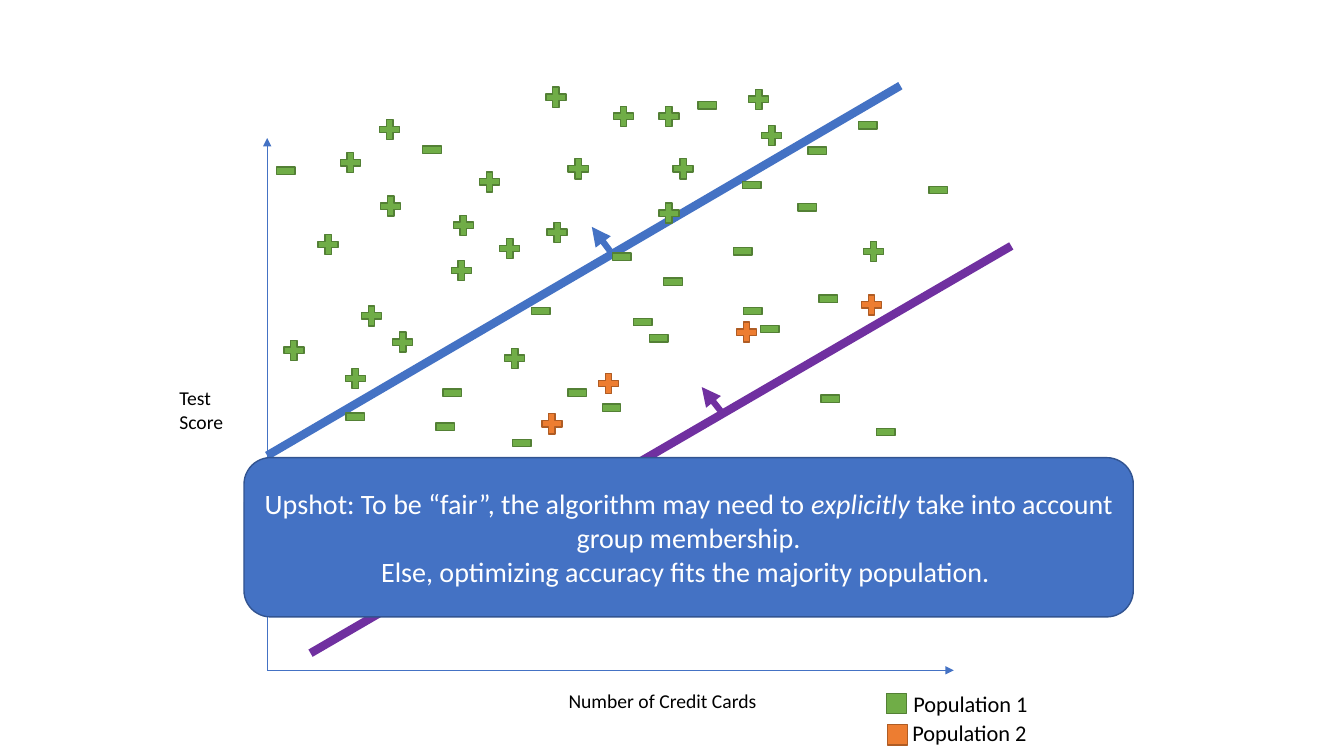
from dataclasses import dataclass

from pptx import Presentation
from pptx import util as u
from pptx.dml.color import RGBColor
from pptx.enum import shapes, text
from pptx.oxml.ns import qn
from lxml import etree


@dataclass(frozen=True)
class Theme:
    font: str = "Calibri"
    blue: str = "4472C4"
    blue_edge: str = "325491"
    purple: str = "7030A0"
    green: tuple = ("70AD47", "538035")
    orange: tuple = ("ED7D31", "AF5C24")
    black: str = "000000"
    white: str = "FFFFFF"
    axis_size: int = 14
    legend_size: int = 16
    callout_size: int = 20


SHAPE = shapes.MSO_SHAPE
PLUS_SIZE = (0.27, 0.27)
MINUS_SIZE = (0.25, 0.31)
SWATCH_SIZE = (0.2, 0.2)

GREEN_PLUSES = [
    (3.55, 3), (4.72, 1.67), (4.97, 3.42), (6.64, 1.54), (7.39, 0.85),
    (3.39, 3.62), (5.38, 0.83), (6.5, 1.98), (3.34, 1.48), (5.6, 1.54),
    (4.44, 2.55), (3.12, 2.29), (6.5, 1.02), (4.92, 2.33), (3.86, 3.26),
    (7.52, 1.21), (3.73, 1.15), (8.53, 2.36), (3.74, 1.91), (6.05, 1.02),
    (5.39, 2.17), (2.78, 3.34), (4.46, 2.1),
]
GREEN_MINUSES = [
    (3.4, 3.98), (7.88, 1.9), (7.33, 1.68), (4.16, 1.33), (6.89, 0.89),
    (2.71, 1.54), (5.6, 3.74), (6.25, 3.04), (7.24, 2.34), (5.24, 2.93),
    (7.98, 1.34), (7.34, 2.93), (7.51, 3.11), (8.66, 4.13), (6.04, 2.39),
    (5.05, 4.24), (6.55, 2.64), (4.29, 4.08), (8.48, 1.09), (8.11, 3.8),
    (5.94, 3.89), (6.41, 3.2), (8.09, 2.81), (9.18, 1.73), (4.36, 3.74),
]
ORANGE_PLUSES = [(5.34, 4.07), (7.27, 3.16), (8.51, 2.89), (5.9, 3.67)]


class ChartPage:
    def __init__(self, page, theme):
        self.page = page
        self.theme = theme

    def line(self, start, end, color, width, arrow=False):
        points = [u.Inches(value) for value in (*start, *end)]
        connector = self.page.shapes.add_connector(
            shapes.MSO_CONNECTOR.STRAIGHT, *points)
        connector.line.color.rgb = RGBColor.from_string(color)
        connector.line.width = u.Pt(width)
        if arrow:
            outline = connector.line._get_or_add_ln()
            etree.SubElement(outline, qn("a:tailEnd"), type="triangle")
        etree.SubElement(connector._element.spPr, qn("a:effectLst"))

    def boundary(self, start, end, foot, tip, color):
        """Draw a separating line and the arrow to its positive side."""
        self.line(start, end, color, 6)
        self.line(foot, tip, color, 4.5, arrow=True)

    def shape(self, kind, place, size, colors):
        fill, edge = colors
        shape = self.page.shapes.add_shape(
            kind, *(u.Inches(value) for value in (*place, *size)))
        shape.shadow.inherit = False
        shape.fill.solid()
        shape.fill.fore_color.rgb = RGBColor.from_string(fill)
        shape.line.color.rgb = RGBColor.from_string(edge)
        shape.line.width = u.Pt(1)
        return shape

    def marks(self, kind, places, size, colors):
        for place in places:
            self.shape(kind, place, size, colors)

    def format_span(self, span, size, color):
        span.font.name = self.theme.font
        span.font.size = u.Pt(size)
        span.font.color.rgb = RGBColor.from_string(color)

    def label(self, words, place, size, points):
        box = self.page.shapes.add_textbox(
            *(u.Inches(value) for value in (*place, *size)))
        frame = box.text_frame
        frame.text = words
        frame.word_wrap = False
        frame.auto_size = text.MSO_AUTO_SIZE.SHAPE_TO_FIT_TEXT
        self.format_span(frame.paragraphs[0].runs[0], points, self.theme.black)

    def legend_entry(self, words, swatch, place, colors):
        self.shape(SHAPE.RECTANGLE, swatch, SWATCH_SIZE, colors)
        self.label(words, place, (1.35, 0.37), self.theme.legend_size)

    def callout(self, paragraphs, place, size):
        """Each paragraph is a list of (words, italic) pairs."""
        theme = self.theme
        box = self.shape(SHAPE.ROUNDED_RECTANGLE, place, size,
                         (theme.blue, theme.blue_edge))
        frame = box.text_frame
        frame.word_wrap = True
        frame.vertical_anchor = text.MSO_ANCHOR.MIDDLE
        for index, pieces in enumerate(paragraphs):
            para = frame.add_paragraph() if index else frame.paragraphs[0]
            para.alignment = text.PP_ALIGN.CENTER
            for words, italic in pieces:
                span = para.add_run()
                span.text = words
                span.font.italic = italic
                self.format_span(span, theme.callout_size, theme.white)


def main():
    deck = Presentation()
    deck.slide_width = u.Inches(13.33)
    deck.slide_height = u.Inches(7.5)
    theme = Theme()
    chart = ChartPage(deck.slides.add_slide(deck.slide_layouts[6]), theme)

    origin = (2.65, 6.65)
    for axis_end in ((2.65, 1.37), (9.46, 6.65)):
        chart.line(origin, axis_end, theme.blue, 0.5, arrow=True)
    chart.label("Test Score", (1.68, 3.78), (0.97, 0.34), theme.axis_size)
    chart.label("Number of Credit Cards", (5.54, 6.79), (2.08, 0.34),
                theme.axis_size)

    chart.boundary((2.65, 4.52), (8.93, 0.85), (6.05, 2.49), (5.87, 2.25),
                   theme.blue)
    chart.marks(SHAPE.MATH_PLUS, GREEN_PLUSES, PLUS_SIZE, theme.green)
    chart.marks(SHAPE.MATH_MINUS, GREEN_MINUSES, MINUS_SIZE, theme.green)
    chart.legend_entry("Population 1", (8.79, 6.88), (8.96, 6.8), theme.green)
    chart.legend_entry("Population 2", (8.8, 7.19), (8.95, 7.09), theme.orange)
    chart.marks(SHAPE.MATH_PLUS, ORANGE_PLUSES, PLUS_SIZE, theme.orange)
    chart.boundary((3.08, 6.48), (10.03, 2.44), (7.15, 4.08), (6.96, 3.84),
                   theme.purple)

    chart.callout(
        [[("Upshot: To be “fair”, the algorithm may need to ", False),
          ("explicitly", True),
          (" take into account group membership.", False)],
         [("Else, optimizing accuracy fits the majority population. ", False)]],
        (2.42, 4.54), (8.82, 1.58))

    deck.save("out.pptx")


if __name__ == "__main__":
    main()
